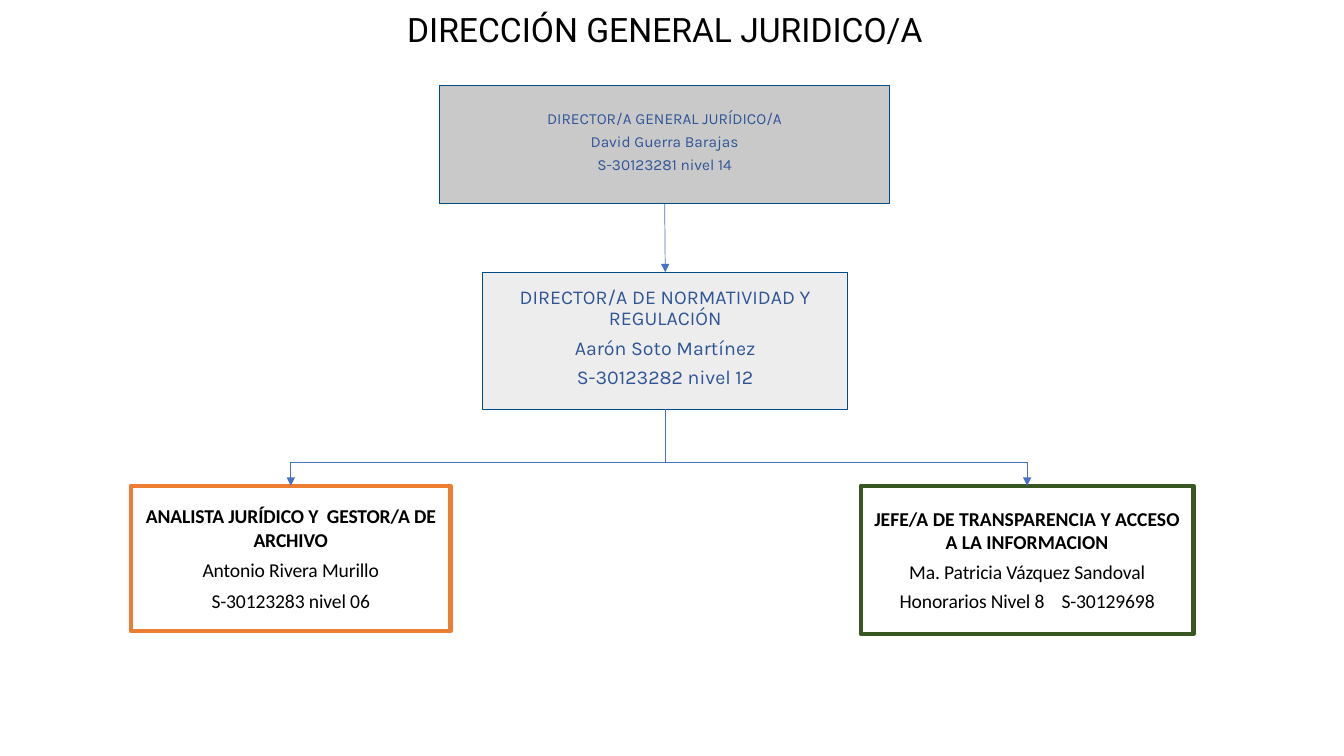
"""Builds the organisation chart of the general legal directorate."""
from lxml import etree
from pptx import Presentation
from pptx import util as u
from pptx.dml.color import RGBColor
from pptx.enum import shapes, text
from pptx.oxml import ns

COLOURS = {
    "black": "000000", "name": "2F5597", "border": "004A86", "arrow": "4472C4",
    "director": "C9C9C9", "regulation": "EDEDED", "analyst": "ED7D31", "transparency": "385723",
}
TITLE = "DIRECCIÓN GENERAL JURIDICO/A"
DIRECTORS = {
    "director": dict(
        lines=["DIRECTOR/A GENERAL JURÍDICO/A", "David Guerra Barajas", "S-30123281 nivel 14"],
        box=(313.9, 61.2, 321.8, 84.2), size=11, after=4.5),
    "regulation": dict(
        lines=["DIRECTOR/A DE NORMATIVIDAD Y REGULACIÓN", "Aarón Soto Martínez",
               "S-30123282 nivel 12"],
        box=(344.9, 194.4, 260.6, 97.9), size=14, after=5.7),
}
REPORTS = {
    "analyst": dict(
        lines=["ANALISTA JURÍDICO Y  GESTOR/A DE ARCHIVO", "Antonio Rivera Murillo",
               "S-30123283 nivel 06"],
        box=(93.6, 347, 228.2, 103.7), before=5.2, tight_from=0, bend=0.7),
    "transparency": dict(
        lines=["JEFE/A DE TRANSPARENCIA Y ACCESO A LA INFORMACION", "Ma. Patricia Vázquez Sandoval",
               "Honorarios Nivel 8    S-30129698"],
        box=(614.9, 347, 237.6, 105.8), before=4.2, tight_from=1, bend=0.69),
}


def rgb(key):
    return RGBColor.from_string(COLOURS[key])


def style(paragraph, font, size, colour, bold=False):
    paragraph.alignment = text.PP_ALIGN.CENTER
    for run in paragraph.runs:
        run.font.name, run.font.size, run.font.bold = font, u.Pt(size), bold
        run.font.color.rgb = rgb(colour)


def add_post(slide, post, border, weight):
    box = slide.shapes.add_shape(shapes.MSO_SHAPE.RECTANGLE, *map(u.Pt, post["box"]))
    box.shadow.inherit = False
    box.line.color.rgb = rgb(border)
    box.line.width = u.Pt(weight)
    box.text_frame.word_wrap = True
    box.text_frame.vertical_anchor = text.MSO_ANCHOR.MIDDLE
    box.text_frame.text = "\n".join(post["lines"])
    return box


def add_director(slide, key, post):
    box = add_post(slide, post, "border", 0.75)
    box.fill.solid()
    box.fill.fore_color.rgb = rgb(key)
    frame = box.text_frame
    frame.margin_left = frame.margin_right = frame.margin_top = u.Pt(0.7)
    frame.margin_bottom = u.Pt(4.3)
    for paragraph in frame.paragraphs:
        style(paragraph, "Karla", post["size"], "name")
        paragraph.line_spacing = 0.9
        paragraph.space_after = u.Pt(post["after"])
    return box


def add_report(slide, key, post):
    box = add_post(slide, post, key, 3)
    box.fill.background()
    for row, paragraph in enumerate(box.text_frame.paragraphs):
        style(paragraph, "Calibri", 14, "black", bold=row == 0)
        paragraph.space_before = u.Pt(post["before"])
        if row >= post["tight_from"]:
            for run in paragraph.runs:
                run.font._element.set("spc", "-10")
    return box


def add_arrow(slide, upper, lower, kind):
    arrow = slide.shapes.add_connector(kind, 0, 0, 0, 0)
    arrow.begin_connect(upper, 2)
    arrow.end_connect(lower, 0)
    arrow.line.color.rgb = rgb("arrow")
    arrow.line.width = u.Pt(0.5)
    etree.SubElement(arrow.line._get_or_add_ln(), ns.qn("a:tailEnd"), type="triangle")
    etree.SubElement(arrow._element.spPr, ns.qn("a:effectLst"))
    return arrow


def turn_downward(arrow, bend):
    """Make an elbow leave and arrive vertically, turning at the given share of its drop."""
    run, drop = arrow.end_x - arrow.begin_x, arrow.end_y - arrow.begin_y
    centre_x, centre_y = (arrow.begin_x + arrow.end_x) // 2, (arrow.begin_y + arrow.end_y) // 2
    frame = arrow._element.spPr.find(ns.qn("a:xfrm"))
    frame.attrib.clear()
    frame.set("rot", "16200000" if run > 0 else "5400000")
    if run > 0:
        frame.set("flipH", "1")
    arrow.width, arrow.height = drop, abs(run)
    arrow.left, arrow.top = centre_x - drop // 2, centre_y - abs(run) // 2
    guides = arrow._element.spPr.find(ns.qn("a:prstGeom")).find(ns.qn("a:avLst"))
    etree.SubElement(guides, ns.qn("a:gd"), name="adj1", fmla=f"val {round(bend * 100000)}")


def main():
    deck = Presentation()
    deck.slide_width, deck.slide_height = u.Pt(960), u.Pt(540)
    slide = deck.slides.add_slide(deck.slide_layouts[5])

    title = slide.shapes.title
    title.left, title.top, title.width, title.height = map(u.Pt, (171.4, 2.9, 607, 36))
    title.text_frame.text = TITLE
    title.text_frame.word_wrap = True
    title.text_frame.auto_size = text.MSO_AUTO_SIZE.NONE
    title.text_frame.vertical_anchor = text.MSO_ANCHOR.TOP
    style(title.text_frame.paragraphs[0], "Roboto", 24, "black")

    director, regulation = [add_director(slide, key, post) for key, post in DIRECTORS.items()]
    add_arrow(slide, director, regulation, shapes.MSO_CONNECTOR.STRAIGHT)
    for key, post in REPORTS.items():
        report = add_report(slide, key, post)
        elbow = add_arrow(slide, regulation, report, shapes.MSO_CONNECTOR.ELBOW)
        turn_downward(elbow, post["bend"])
    deck.save("out.pptx")


if __name__ == "__main__":
    main()
